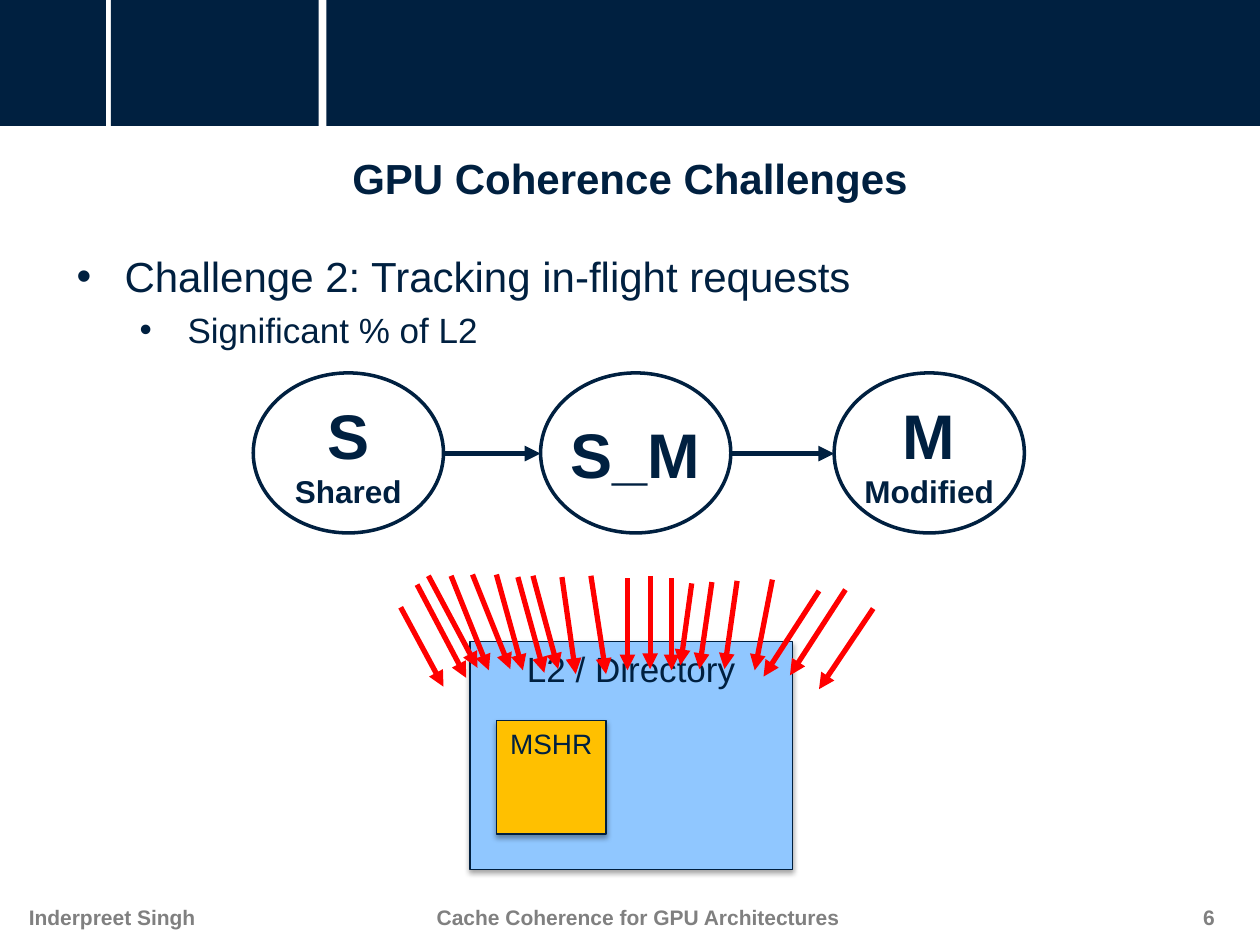
"""Build the GPU coherence challenges slide with its state diagram and L2 directory."""
from lxml.etree import SubElement
from pptx import Presentation
from pptx.dml.color import RGBColor
from pptx.enum.shapes import MSO_CONNECTOR, MSO_SHAPE
from pptx.enum.text import MSO_ANCHOR, PP_ALIGN
from pptx.oxml import parse_xml
from pptx.oxml.ns import nsdecls, qn
from pptx.util import Inches, Pt

NAVY = RGBColor(0x00, 0x20, 0x40)
OUTLINE = RGBColor(0x00, 0x1F, 0x3F)
LIGHT_BLUE = RGBColor(0x90, 0xC7, 0xFF)
AMBER = RGBColor(0xFF, 0xC0, 0x00)
RED = RGBColor(0xFF, 0x00, 0x00)
GRAY = RGBColor(0x80, 0x80, 0x80)
WHITE = RGBColor(0xFF, 0xFF, 0xFF)
SHADOW = (
    f'<a:outerShdw {nsdecls("a")} blurRad="{Pt(3.1)}" dist="{Pt(1.8)}" dir="5400000" rotWithShape="0">'
    '<a:srgbClr val="000000"><a:alpha val="35000"/></a:srgbClr></a:outerShdw>'
)


def write_text(shape, text, size, color=NAVY, bold=False, align=PP_ALIGN.CENTER, anchor=MSO_ANCHOR.TOP):
    text_frame = shape.text_frame
    text_frame.word_wrap = True
    text_frame.vertical_anchor = anchor
    paragraph = text_frame.paragraphs[0]
    paragraph.text = text
    paragraph.alignment = align
    for run in paragraph.runs:
        run.font.name = "Arial"
        run.font.size = Pt(size)
        run.font.bold = bold
        run.font.color.rgb = color
    return paragraph


def add_arrow(start_x, start_y, end_x, end_y, color):
    arrow = slide.shapes.add_connector(
        MSO_CONNECTOR.STRAIGHT, Inches(start_x), Inches(start_y), Inches(end_x), Inches(end_y)
    )
    arrow.line.color.rgb = color
    arrow.line.width = Pt(3)
    SubElement(arrow.line._get_or_add_ln(), qn("a:tailEnd"), type="triangle")
    SubElement(arrow._element.spPr, qn("a:effectLst"))


presentation = Presentation()
presentation.slide_width = Inches(10)
presentation.slide_height = Inches(7.5)
slide = presentation.slides.add_slide(presentation.slide_layouts[6])

for left, width in [(0.88, 1.65), (2.59, 7.5), (0, 0.84)]:
    band = slide.shapes.add_shape(MSO_SHAPE.RECTANGLE, Inches(left), 0, Inches(width), Inches(1))
    band.shadow.inherit = False
    band.fill.solid()
    band.fill.fore_color.rgb = NAVY
    band.line.fill.background()

for text, left, width, align in [
    ("Inderpreet Singh", 0.13, 1.58, PP_ALIGN.LEFT),
    ("Cache Coherence for GPU Architectures", 3.11, 3.91, PP_ALIGN.CENTER),
    ("6", 9.45, 0.43, PP_ALIGN.LEFT),
]:
    footer = slide.shapes.add_textbox(Inches(left), Inches(7.13), Inches(width), Inches(0.3))
    write_text(footer, text, 12, GRAY, True, align)

for text, left, top, width, height, size, color in [
    ("L2 / Directory", 3.73, 5.09, 2.56, 1.81, 20, LIGHT_BLUE),
    ("MSHR", 3.94, 5.72, 0.87, 0.9, 16, AMBER),
]:
    block = slide.shapes.add_shape(
        MSO_SHAPE.RECTANGLE, Inches(left), Inches(top), Inches(width), Inches(height)
    )
    block.fill.solid()
    block.fill.fore_color.rgb = color
    block.line.color.rgb = OUTLINE
    block.line.width = Pt(0.75)
    block.shadow.inherit = False
    block._element.spPr.find(qn("a:effectLst")).append(parse_xml(SHADOW))
    write_text(block, text, size)
    block.text_frame.word_wrap = False

title = slide.shapes.add_textbox(Inches(0.51), Inches(1.16), Inches(8.98), Inches(0.59))
write_text(title, "GPU Coherence Challenges", 24, bold=True)

body = slide.shapes.add_textbox(Inches(0.51), Inches(1.94), Inches(8.98), Inches(1.02))
body.text_frame.word_wrap = True
body.text_frame.text = "Challenge 2: Tracking in-flight requests\nSignificant % of L2"
for level, (paragraph, size, indent) in enumerate(zip(body.text_frame.paragraphs, (24, 20), (0.38, 0.88))):
    paragraph.level = level
    if level:
        paragraph.space_before = Pt(4)
    properties = paragraph._p.get_or_add_pPr()
    properties.set("marL", str(Inches(indent)))
    properties.set("indent", str(Inches(-0.38)))
    SubElement(properties, qn("a:buFont"), typeface="Arial")
    SubElement(properties, qn("a:buChar"), char="•")
    font = paragraph.runs[0].font
    font.name = "Arial"
    font.size = Pt(size)
    font.color.rgb = NAVY

for text, left in [("S\nShared", 2.01), ("M\nModified", 6.62), ("S_M", 4.29)]:
    state = slide.shapes.add_shape(MSO_SHAPE.OVAL, Inches(left), Inches(2.96), Inches(1.51), Inches(1.27))
    state.shadow.inherit = False
    state.fill.solid()
    state.fill.fore_color.rgb = WHITE
    state.line.color.rgb = NAVY
    state.line.width = Pt(2)
    text_frame = state.text_frame
    text_frame.margin_left = text_frame.margin_right = 0
    text_frame.margin_top = text_frame.margin_bottom = 0
    label = write_text(state, text, 36, bold=True, anchor=MSO_ANCHOR.MIDDLE)
    for run in label.runs[1:]:
        run.font.size = Pt(18)

for start_x, end_x in [(3.51, 4.29), (5.8, 6.62)]:
    add_arrow(start_x, 3.6, end_x, 3.6, NAVY)

requests = [
    (3.31, 4.64, 3.7, 5.38), (4.23, 4.57, 4.43, 5.31), (5.16, 4.57, 5.16, 5.31),
    (6.13, 4.6, 5.99, 5.32), (6.93, 4.83, 6.5, 5.47), (3.58, 4.57, 3.88, 5.32),
    (3.94, 4.56, 4.15, 5.32), (4.69, 4.57, 4.81, 5.35), (5.49, 4.63, 5.4, 5.28),
    (5.85, 4.61, 5.75, 5.31), (6.71, 4.68, 6.27, 5.36), (3.4, 4.57, 3.79, 5.3),
    (3.75, 4.56, 4.05, 5.31), (4.11, 4.58, 4.32, 5.34), (4.46, 4.58, 4.57, 5.35),
    (4.98, 4.59, 4.98, 5.32), (5.33, 4.59, 5.33, 5.32), (5.65, 4.62, 5.55, 5.31),
    (6.5, 4.69, 6.06, 5.37), (3.18, 4.82, 3.52, 5.45),
]
for request in requests:
    add_arrow(*request, RED)

presentation.save("out.pptx")
